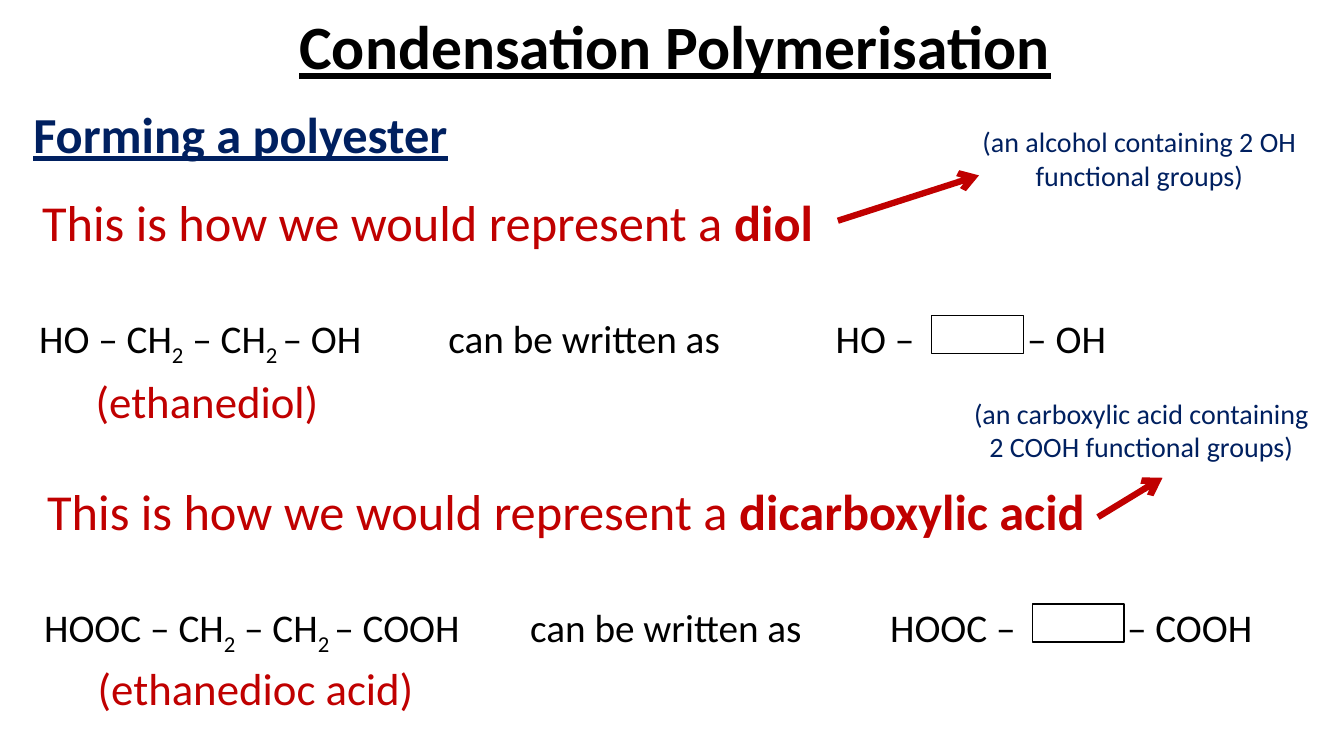
from dataclasses import dataclass

from lxml.etree import SubElement
from pptx import Presentation
from pptx.dml.color import RGBColor
from pptx.enum.shapes import MSO_CONNECTOR, MSO_SHAPE
from pptx.enum.text import MSO_ANCHOR, MSO_AUTO_SIZE, PP_ALIGN
from pptx.oxml.ns import qn
from pptx.util import Inches, Pt

COLORS = {"ink": "000000", "navy": "002060", "red": "C00000", "paper": "FFFFFF"}
FONT = "Calibri"
COLUMNS, ROWS = 133.3, 75
CELL = Inches(0.1)


@dataclass
class Monomer:
    """One monomer family; positions are grid cells from the section's corner."""
    family: str
    definition: str
    definition_at: tuple
    arrow: tuple
    formula: tuple
    tab_stops: tuple
    chain_left: float
    example: str
    example_at: tuple


MONOMERS = [
    Monomer("diol", "(an alcohol containing 2 OH functional groups)", (92.1, -6.6),
            ((80.2, 3.4), (94.2, -1.1)), ("HO", "OH"), (40.6, 79, 98), 89.5,
            "(ethanediol)", (5.6, 18.1, 24.4)),
    Monomer("dicarboxylic acid", "(an carboxylic acid containing 2 COOH functional groups)",
            (91.8, -8.3), ((105.5, 4.2), (111.9, 0.3)), ("HOOC", "COOH"),
            (48.2, 83.9, 107.4), 99, "(ethanedioc acid)", (5.3, 18, 33.7)),
]


def cells(*lengths):
    """Turn grid cells into slide lengths."""
    return [round(length * CELL) for length in lengths]


def rgb(name):
    """Look up a palette colour."""
    return RGBColor.from_string(COLORS[name])


def format_run(run, size, color, bold=None, underline=None):
    """Apply font, size and colour to a run."""
    run.font.name, run.font.size = FONT, Pt(size)
    run.font.color.rgb = rgb(color)
    run.font.bold, run.font.underline = bold, underline


def add_line(slide, box, parts, size, color, align=PP_ALIGN.LEFT, wrap=True):
    """Add a text box with one paragraph made of (text, bold) parts."""
    frame = slide.shapes.add_textbox(*cells(*box)).text_frame
    frame.word_wrap = wrap
    paragraph = frame.paragraphs[0]
    paragraph.alignment = align
    for text, bold in parts:
        run = paragraph.add_run()
        run.text = text
        format_run(run, size, color, bold)
    return paragraph


def add_arrow(slide, start, end):
    """Draw a thick red arrow between two grid points."""
    arrow = slide.shapes.add_connector(MSO_CONNECTOR.STRAIGHT, *cells(*start, *end))
    arrow.line.color.rgb = rgb("red")
    arrow.line.width = Pt(4.5)
    SubElement(arrow.line._get_or_add_ln(), qn("a:tailEnd"), type="arrow")
    SubElement(arrow._element.spPr, qn("a:effectLst"))


def add_formula(slide, box, monomer):
    """Write the full and the shortened formula, with a box for the carbon chain."""
    left, top, width, height = box
    start, end = monomer.formula
    parts = [f"{start} – CH", "2", " – CH", "2 ",
             f"– {end}\tcan be written as\t{start} –\t– {end}"]
    paragraph = add_line(slide, box, [(part, None) for part in parts], 28, "ink")
    paragraph.line_spacing, paragraph.space_before = 0.9, Pt(10)
    for subscript in paragraph.runs[1:4:2]:
        subscript._r.get_or_add_rPr().set("baseline", "-25000")
    stops = SubElement(paragraph._p.get_or_add_pPr(), qn("a:tabLst"))
    for stop in cells(*monomer.tab_stops):
        SubElement(stops, qn("a:tab"), pos=str(stop), algn="l")

    chain = slide.shapes.add_shape(
        MSO_SHAPE.RECTANGLE, *cells(left + monomer.chain_left, top + 0.5, 9.1, 3.8))
    chain.shadow.inherit = False
    chain.fill.solid()
    chain.fill.fore_color.rgb = rgb("paper")
    chain.line.color.rgb = rgb("ink")
    chain.line.width = Pt(1)


def add_monomer(slide, left, top, monomer):
    """Place statement, definition, arrow, formula and example of one monomer."""
    statement = [("This is how we would represent a ", None), (monomer.family, True)]
    add_line(slide, (left + 0.3, top, 129.7, 7.1), statement, 36, "red")
    x, y = monomer.definition_at
    add_line(slide, (left + x, top + y, 36, 7.7), [(monomer.definition, None)],
             20, "navy", PP_ALIGN.CENTER)
    add_arrow(slide, *[(left + x, top + y) for x, y in monomer.arrow])
    add_formula(slide, (left, top + 12.3, 126.4, 11.1), monomer)
    x, y, width = monomer.example_at
    add_line(slide, (left + x, top + y, width, 6.4), [(monomer.example, None)],
             32, "red", wrap=False)


def fill_placeholder(holder, box, text, size, color, align, anchor):
    """Move a placeholder and give it one bold underlined line."""
    holder.left, holder.top, holder.width, holder.height = cells(*box)
    frame = holder.text_frame
    frame.text = text
    frame.word_wrap, frame.auto_size = True, MSO_AUTO_SIZE.NONE
    frame.vertical_anchor = anchor
    paragraph = frame.paragraphs[0]
    paragraph.alignment, paragraph.line_spacing = align, 0.9
    format_run(paragraph.runs[0], size, color, True, True)
    return paragraph


def add_headings(slide):
    """Fill the title and the subheading."""
    title, topic = slide.placeholders
    fill_placeholder(title, (1.2, 0.8, 131.5, 8.3), "Condensation Polymerisation",
                     44, "ink", PP_ALIGN.CENTER, MSO_ANCHOR.MIDDLE)
    subheading = fill_placeholder(topic, (2.3, 10.4, 128.7, 7.4), "Forming a polyester",
                                  36, "navy", PP_ALIGN.LEFT, MSO_ANCHOR.TOP)
    subheading.space_before = Pt(10)
    properties = subheading._p.get_or_add_pPr()
    properties.set("marL", "0")
    properties.set("indent", "0")
    SubElement(properties, qn("a:buNone"))


def main():
    """Build the slide and save it."""
    deck = Presentation()
    deck.slide_width, deck.slide_height = cells(COLUMNS, ROWS)
    slide = deck.slides.add_slide(deck.slide_layouts[1])
    add_headings(slide)
    for index, monomer in enumerate(MONOMERS):
        add_monomer(slide, 2.9 + 0.5 * index, 18.5 + 28.6 * index, monomer)
    deck.save("out.pptx")


if __name__ == "__main__":
    main()
